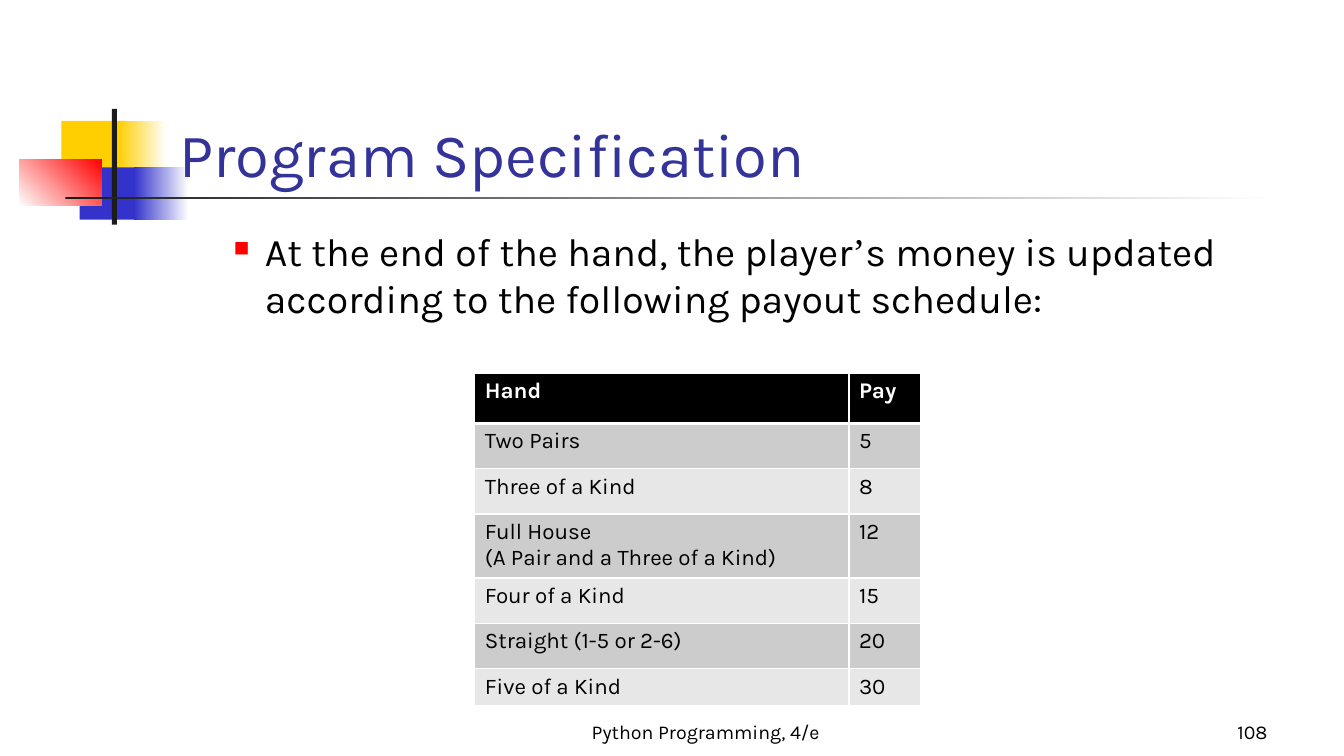
from lxml import etree
from pptx import Presentation
from pptx.dml.color import RGBColor
from pptx.enum.shapes import MSO_SHAPE
from pptx.enum.text import MSO_ANCHOR as Anchor, PP_ALIGN as Align
from pptx.oxml.ns import qn
from pptx.util import Inches, Pt

COLORS = {
    "yellow": "FFCF01", "blue": "3333CC", "red": "FF0000", "ink": "1C1C1C",
    "title": "333399", "black": "000000", "white": "FFFFFF",
    "band_dark": "CCCCCC", "band_light": "E7E7E7",
}
RGB = {name: RGBColor.from_string(value) for name, value in COLORS.items()}


def style(paragraph, size, color="black", bold=False):
    for run in paragraph.runs:
        run.font.name = "Karla"
        run.font.size = Pt(size)
        run.font.bold = bold
        run.font.color.rgb = RGB[color]


def add_text(box, text, size, color="black", align=Align.LEFT, anchor=Anchor.BOTTOM):
    frame = slide.shapes.add_textbox(*map(Inches, box)).text_frame
    frame.word_wrap = True
    frame.vertical_anchor = anchor
    paragraph = frame.paragraphs[0]
    paragraph.text = text
    paragraph.alignment = align
    style(paragraph, size, color)
    return paragraph


prs = Presentation()
prs.slide_width, prs.slide_height = Inches(13.33), Inches(7.5)
slide = prs.slides.add_slide(prs.slide_layouts[6])

# Corner decoration: box, start colour, end colour, counterclockwise angle
decoration = [
    ((0.61, 1.2, 0.64, 0.52), "yellow", None, 0),
    ((1.17, 1.2, 0.48, 0.52), "yellow", "white", 0),
    ((0.79, 1.66, 0.62, 0.52), "blue", None, 0),
    ((1.33, 1.66, 0.54, 0.52), "blue", "white", 0),
    ((0.19, 1.58, 0.82, 0.46), "white", "red", 45),
    ((1.11, 1.08, 0.05, 1.15), "ink", None, 0),
    ((0.65, 1.95, 12, 0.03), "ink", "white", 0),
]
for box, start, end, angle in decoration:
    block = slide.shapes.add_shape(MSO_SHAPE.RECTANGLE, *map(Inches, box))
    block.shadow.inherit = False
    block.line.fill.background()
    if end:
        block.fill.gradient()
        block.fill.gradient_angle = angle
        for stop, color in zip(block.fill.gradient_stops, (start, end)):
            stop.color.rgb = RGB[color]
    else:
        block.fill.solid()
        block.fill.fore_color.rgb = RGB[start]

# Footer and title
add_text((4.89, 6.92, 4.22, 0.5), "Python Programming, 4/e", 14, align=Align.CENTER)
add_text((9.89, 6.92, 2.78, 0.5), "108", 14, align=Align.RIGHT)
add_text((1.68, 0.68, 11.36, 1.25), "Program Specification", 44, "title")

# Bulleted statement
statement = add_text((1.72, 2.21, 11.33, 4.5), "At the end of the hand, the player", 28,
                     anchor=Anchor.TOP)
apostrophe = statement.add_run()
apostrophe.text = "’"
statement.add_run().text = "s money is updated according to the following payout schedule:"
style(statement, 28)
apostrophe.font.name = "Times New Roman"

bullet = statement._p.get_or_add_pPr()
bullet.set("marL", str(Inches(0.81)))
bullet.set("indent", str(Inches(-0.31)))
bullet_color = etree.SubElement(bullet, qn("a:buClr"))
etree.SubElement(bullet_color, qn("a:srgbClr"), val=COLORS["red"])
etree.SubElement(bullet, qn("a:buSzPct"), val="55000")
etree.SubElement(bullet, qn("a:buChar"), char="■")

# Payout table
payouts = [
    ("Hand", "Pay"),
    ("Two Pairs", "5"),
    ("Three of a Kind", "8"),
    ("Full House\v(A Pair and a Three of a Kind)", "12"),
    ("Four of a Kind", "15"),
    ("Straight (1-5 or 2-6)", "20"),
    ("Five of a Kind", "30"),
]
column_widths = (3.71, 0.71)
row_heights = (0.5, 0.45, 0.45, 0.63, 0.45, 0.45, 0.37)
schedule = slide.shapes.add_table(len(payouts), 2, Inches(4.71), Inches(3.7),
                                  Inches(sum(column_widths)), Inches(sum(row_heights))).table
for column, width in zip(schedule.columns, column_widths):
    column.width = Inches(width)

for r, (payout, height) in enumerate(zip(payouts, row_heights)):
    schedule.rows[r].height = Inches(height)
    header = r == 0
    fill = "black" if header else ("band_light", "band_dark")[r % 2]
    for c, text in enumerate(payout):
        cell = schedule.cell(r, c)
        paragraph = cell.text_frame.paragraphs[0]
        paragraph.text = text
        style(paragraph, 16, "white" if header else "black", header)

        # White rules, thicker between the header and the first row
        heavy = {0: "lnB", 1: "lnT"}.get(r)
        for side in ("lnL", "lnR", "lnT", "lnB"):
            rule = etree.SubElement(cell._tc.get_or_add_tcPr(), qn(f"a:{side}"),
                                    w=str(Pt(3 if side == heavy else 1)))
            rule_fill = etree.SubElement(rule, qn("a:solidFill"))
            etree.SubElement(rule_fill, qn("a:srgbClr"), val=COLORS["white"])
        cell.fill.solid()
        cell.fill.fore_color.rgb = RGB[fill]

prs.save("out.pptx")
